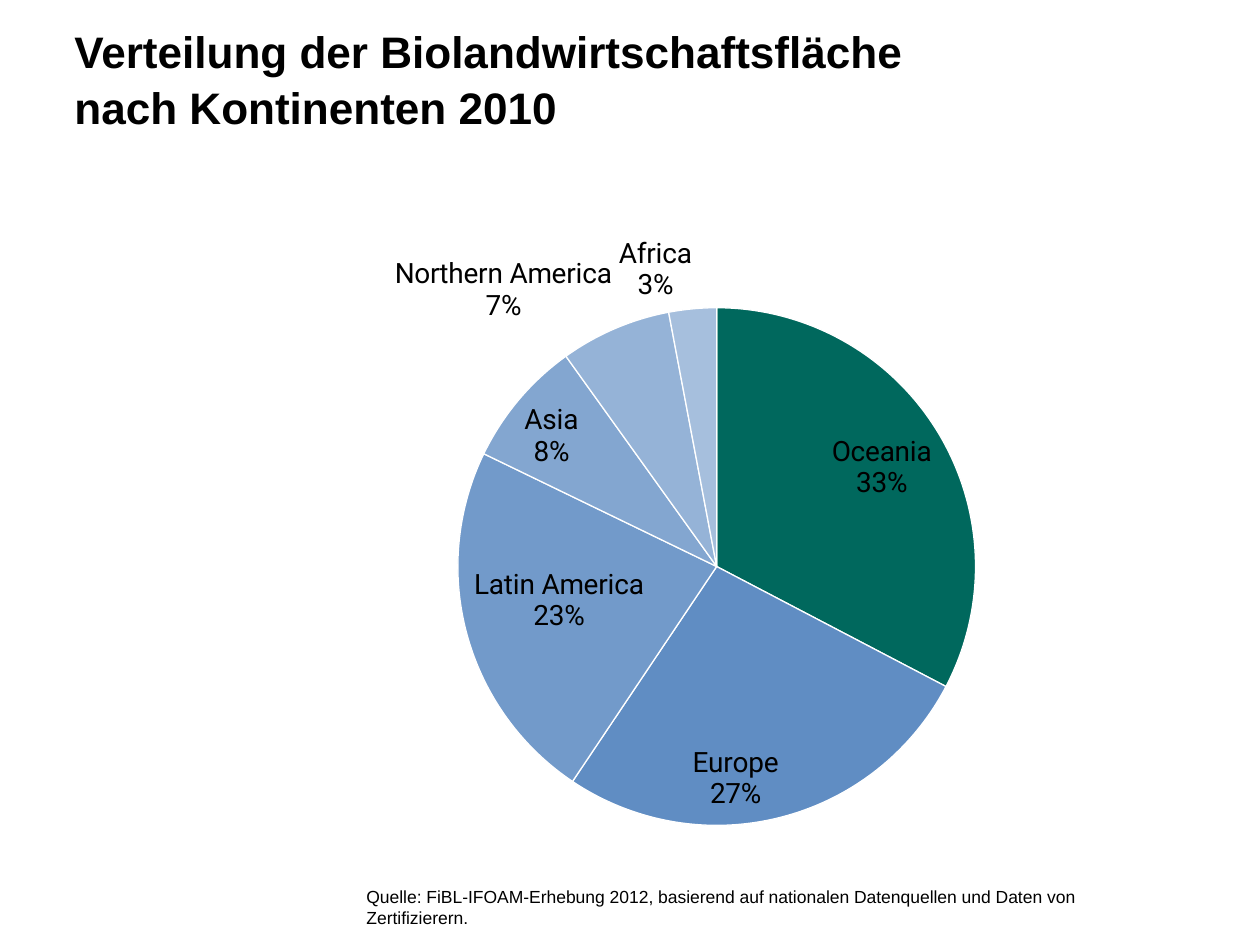
from lxml.etree import SubElement
from pptx import Presentation
from pptx.chart.data import CategoryChartData
from pptx.dml.color import RGBColor
from pptx.enum.chart import XL_CHART_TYPE, XL_LABEL_POSITION
from pptx.enum.text import MSO_ANCHOR
from pptx.oxml import parse_xml
from pptx.oxml.ns import nsdecls, qn
from pptx.util import Pt

# Content
TITLE = ["Verteilung der Biolandwirtschaftsfläche", "nach Kontinenten 2010"]
SOURCE = ["Quelle: FiBL-IFOAM-Erhebung 2012, basierend auf nationalen "
          "Datenquellen und Daten von Zertifizierern."]
# continent, share, slice colour, opacity in percent, label outside
SHARES = [
    ("Oceania", 33, "00685D", 100, False),
    ("Europe", 27, "4F81BD", 90, False),
    ("Latin America", 23, "4F81BD", 80, False),
    ("Asia", 8, "4F81BD", 70, False),
    ("Northern America", 7, "4F81BD", 60, True),
    ("Africa", 3, "4F81BD", 50, True),
]
PIE_AREA = {"x": 0.348, "y": 0.14, "w": 0.457, "h": 0.83}  # shares of the chart


def color(value):
    return RGBColor.from_string(value)


def style_font(font, name, size, bold=False):
    font.name, font.size, font.bold = name, Pt(size), bold
    font.color.rgb = color("000000")


def add_text(page, lines, place, size, margins, bold=False,
             anchor=MSO_ANCHOR.TOP, spacing=1.0):
    frame = page.shapes.add_textbox(*map(Pt, place)).text_frame
    frame.word_wrap = True
    frame.vertical_anchor = anchor
    (frame.margin_left, frame.margin_top,
     frame.margin_right, frame.margin_bottom) = map(Pt, margins)
    para = frame.paragraphs[0]
    para.line_spacing = spacing
    for index, line in enumerate(lines):
        if index:
            para.add_line_break()
        span = para.add_run()
        span.text = line
        style_font(span.font, "Arial", size, bold)


def add_pie(page, place):
    data = CategoryChartData(number_format="#,##0")
    data.categories = [share[0] for share in SHARES]
    data.add_series("Series 1", [share[1] for share in SHARES])
    chart = page.shapes.add_chart(XL_CHART_TYPE.PIE, *map(Pt, place), data).chart
    chart.has_legend = False
    chart.has_title = False
    style_font(chart.font, "Arial", 18)
    chart.plots[0].vary_by_categories = True
    series = chart.plots[0].series[0]

    labels = series.data_labels
    labels.position = XL_LABEL_POSITION.INSIDE_END
    style_font(labels.font, "Roboto", 16)

    # Slices, with their own label places
    for index, (_, _, fill, opacity, outside) in enumerate(SHARES):
        point = series.points[index]
        point.format.fill.solid()
        point.format.fill.fore_color.rgb = color(fill)
        point.format.line.color.rgb = color("FFFFFF")
        point.format.line.width = Pt(0.75)
        if opacity < 100:
            tint = point.format.fill._xPr.find(qn("a:solidFill"))[0]
            SubElement(tint, qn("a:alpha"), val=str(opacity * 1000))
        if outside:
            point.data_label.position = XL_LABEL_POSITION.OUTSIDE_END
            style_font(point.data_label.font, "Roboto", 16)

    # Every label shows continent and percentage on two lines
    shown = {"showVal": "0", "showCatName": "1", "showPercent": "1"}
    for tag, value in shown.items():
        for flag in series._element.iter(qn("c:" + tag)):
            flag.set("val", value)
    for flag in list(series._element.iter(qn("c:showBubbleSize"))):
        flag.addnext(parse_xml(f"<c:separator {nsdecls('c')}>\n</c:separator>"))

    # Fixed place of the pie inside the chart
    plot_area = chart._chartSpace.chart.plotArea
    for old in plot_area.findall(qn("c:layout")):
        plot_area.remove(old)
    layout = parse_xml(f"<c:layout {nsdecls('c')}/>")
    manual = SubElement(layout, qn("c:manualLayout"))
    SubElement(manual, qn("c:layoutTarget"), val="inner")
    for axis in "xy":
        SubElement(manual, qn(f"c:{axis}Mode"), val="edge")
    for side, value in PIE_AREA.items():
        SubElement(manual, qn("c:" + side), val=str(value))
    plot_area.insert(0, layout)


deck = Presentation()
deck.slide_width, deck.slide_height = Pt(720), Pt(540)
page = deck.slides.add_slide(deck.slide_layouts[6])

add_text(page, TITLE, (42.5, 18, 649.5, 56), 25.2, (0, 0, 7.2, 3.6),
         bold=True, anchor=MSO_ANCHOR.MIDDLE, spacing=1.05)
add_pie(page, (36, 126, 648, 356.4))
add_text(page, SOURCE, (202.3, 502.6, 419.8, 31.7), 10, (7.2, 3.6, 7.2, 3.6))

deck.save("out.pptx")
